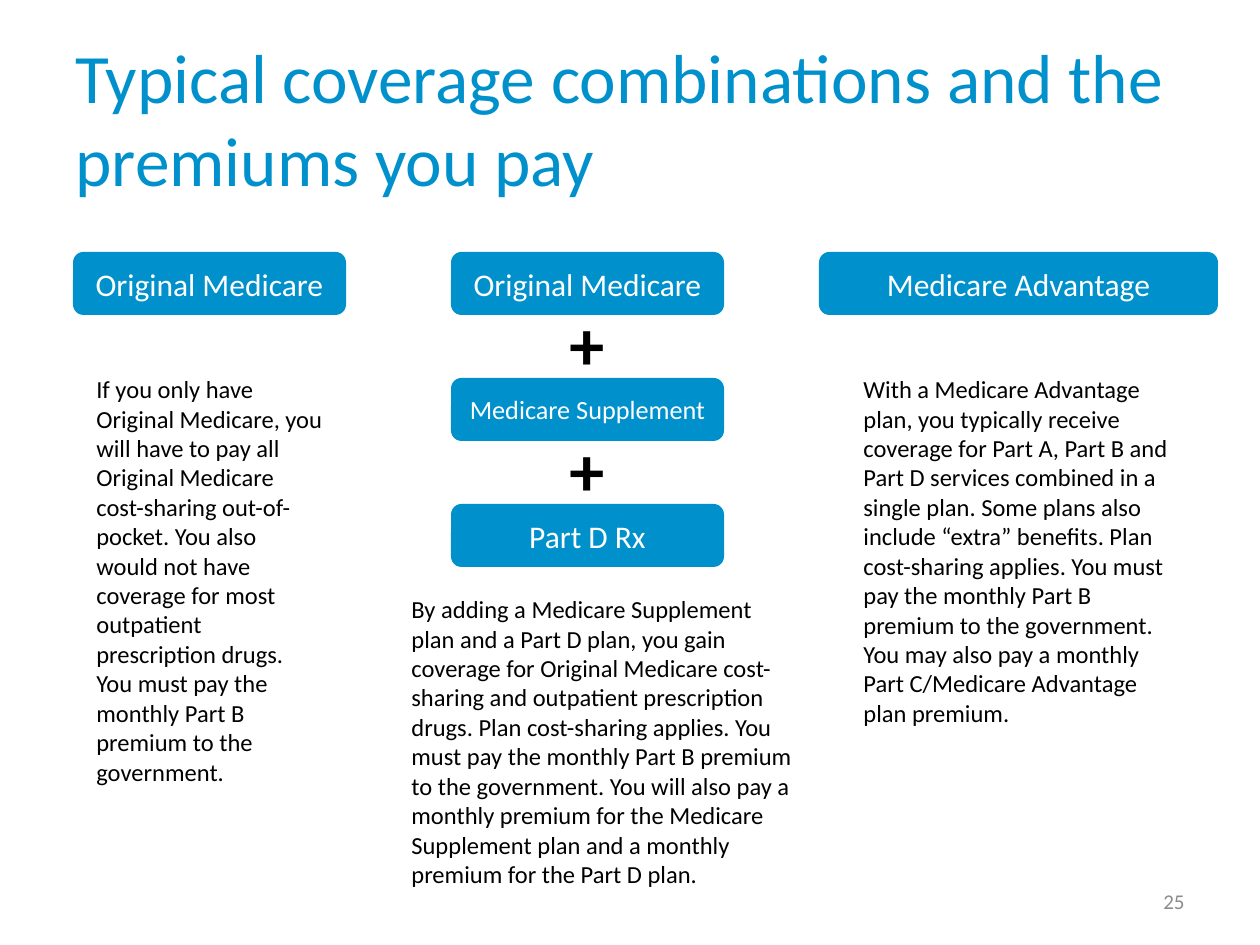
from dataclasses import dataclass

from pptx import Presentation
from pptx.dml.color import RGBColor
from pptx.enum.shapes import MSO_SHAPE
from pptx.enum.text import MSO_ANCHOR, MSO_AUTO_SIZE, PP_ALIGN
from pptx.shapes.shapetree import GroupShapes, SlideShapes
from pptx.text.text import TextFrame
from pptx.util import Emu, Pt

PX_PER_INCH = 126
EMU_PER_PX = 914400 / PX_PER_INCH


@dataclass(frozen=True)
class Theme:
    font: str = "Calibri"
    blue: RGBColor = RGBColor(0x00, 0x91, 0xCC)
    white: RGBColor = RGBColor(0xFF, 0xFF, 0xFF)
    black: RGBColor = RGBColor(0x00, 0x00, 0x00)
    grey: RGBColor = RGBColor(0x8C, 0x8C, 0x8C)
    title_size: float = 39.6
    plus_size: float = 40
    plan_size: float = 18
    small_plan_size: float = 15
    body_size: float = 14
    number_size: float = 12


THEME = Theme()


@dataclass(frozen=True)
class Box:
    left: int
    top: int
    width: int
    height: int

    def emu(self) -> tuple[Emu, Emu, Emu, Emu]:
        return tuple(Emu(round(px * EMU_PER_PX))
                     for px in (self.left, self.top, self.width, self.height))


@dataclass(frozen=True)
class Plan:
    name: str
    size: float = THEME.plan_size


@dataclass(frozen=True)
class Combination:
    """A column: stacked plans joined by plus signs, and an explanation."""
    plans: tuple[Plan, ...]
    left: int
    width: int
    explanation: str
    explanation_box: Box


Shapes = SlideShapes | GroupShapes

PLAN_TOP = 252
PLAN_HEIGHT = 63
PLAN_STEP = 126
PLUS_LEFT_OFFSET = 106
PLUS_TOP_OFFSET = 42

COMBINATIONS = (
    Combination(
        (Plan("Original Medicare"),), 73, 273,
        "If you only have Original Medicare, you will have to pay all Original "
        "Medicare cost-sharing out-of-pocket. You also would not have coverage "
        "for most outpatient prescription drugs. You must pay the monthly "
        "Part B premium to the government.",
        Box(84, 368, 252, 428)),
    Combination(
        (Plan("Original Medicare"),
         Plan("Medicare Supplement", THEME.small_plan_size),
         Plan("Part D Rx")), 451, 273,
        "By adding a Medicare Supplement plan and a Part D plan, you gain "
        "coverage for Original Medicare cost-sharing and outpatient "
        "prescription drugs. Plan cost-sharing applies. You must pay the "
        "monthly Part B premium to the government. You will also pay a monthly "
        "premium for the Medicare Supplement plan and a monthly premium for "
        "the Part D plan.",
        Box(399, 588, 410, 310)),
    Combination(
        (Plan("Medicare Advantage"),), 819, 399,
        "With a Medicare Advantage plan, you typically receive coverage for "
        "Part A, Part B and Part D services combined in a single plan. Some "
        "plans also include “extra” benefits. Plan cost-sharing applies. You "
        "must pay the monthly Part B premium to the government. You may also "
        "pay a monthly Part C/Medicare Advantage plan premium.",
        Box(851, 368, 336, 369)),
)


def write(frame: TextFrame, text: str, size: float, color: RGBColor,
          align: PP_ALIGN = PP_ALIGN.LEFT, anchor: MSO_ANCHOR = MSO_ANCHOR.TOP,
          bold: bool = False) -> None:
    frame.word_wrap = True
    frame.vertical_anchor = anchor
    paragraph = frame.paragraphs[0]
    paragraph.text = text
    paragraph.alignment = align
    paragraph.font.name = THEME.font
    paragraph.font.size = Pt(size)
    paragraph.font.bold = bold
    paragraph.font.color.rgb = color


def add_text(shapes: Shapes, box: Box) -> TextFrame:
    return shapes.add_textbox(*box.emu()).text_frame


def add_plan(shapes: Shapes, plan: Plan, box: Box) -> None:
    button = shapes.add_shape(MSO_SHAPE.ROUNDED_RECTANGLE, *box.emu())
    button.shadow.inherit = False
    button.fill.solid()
    button.fill.fore_color.rgb = THEME.blue
    button.line.fill.background()
    write(button.text_frame, plan.name, plan.size, THEME.white,
          PP_ALIGN.CENTER, MSO_ANCHOR.MIDDLE)


def add_plus(shapes: Shapes, box: Box) -> None:
    frame = add_text(shapes, box)
    write(frame, "+", THEME.plus_size, THEME.black, bold=True)
    frame.auto_size = MSO_AUTO_SIZE.SHAPE_TO_FIT_TEXT


def add_combination(shapes: SlideShapes, combination: Combination) -> None:
    stacked = len(combination.plans) > 1
    stack = shapes.add_group_shape().shapes if stacked else shapes
    for row, plan in enumerate(combination.plans):
        top = PLAN_TOP + row * PLAN_STEP
        add_plan(stack, plan,
                 Box(combination.left, top, combination.width, PLAN_HEIGHT))
        if row < len(combination.plans) - 1:
            add_plus(stack, Box(combination.left + PLUS_LEFT_OFFSET,
                                top + PLUS_TOP_OFFSET, 42, 97))
    frame = add_text(shapes, combination.explanation_box)
    write(frame, combination.explanation, THEME.body_size, THEME.black)
    frame.auto_size = MSO_AUTO_SIZE.SHAPE_TO_FIT_TEXT


def main() -> None:
    presentation = Presentation()
    _, _, presentation.slide_width, presentation.slide_height = Box(
        0, 0, 1260, 945).emu()
    shapes = presentation.slides.add_slide(presentation.slide_layouts[6]).shapes

    write(add_text(shapes, Box(63, 38, 1134, 158)),
          "Typical coverage combinations and the premiums you pay",
          THEME.title_size, THEME.blue, anchor=MSO_ANCHOR.MIDDLE)
    write(add_text(shapes, Box(903, 876, 294, 50)), "25", THEME.number_size,
          THEME.grey, PP_ALIGN.RIGHT, MSO_ANCHOR.MIDDLE)
    for combination in COMBINATIONS:
        add_combination(shapes, combination)

    presentation.save("out.pptx")


if __name__ == "__main__":
    main()
